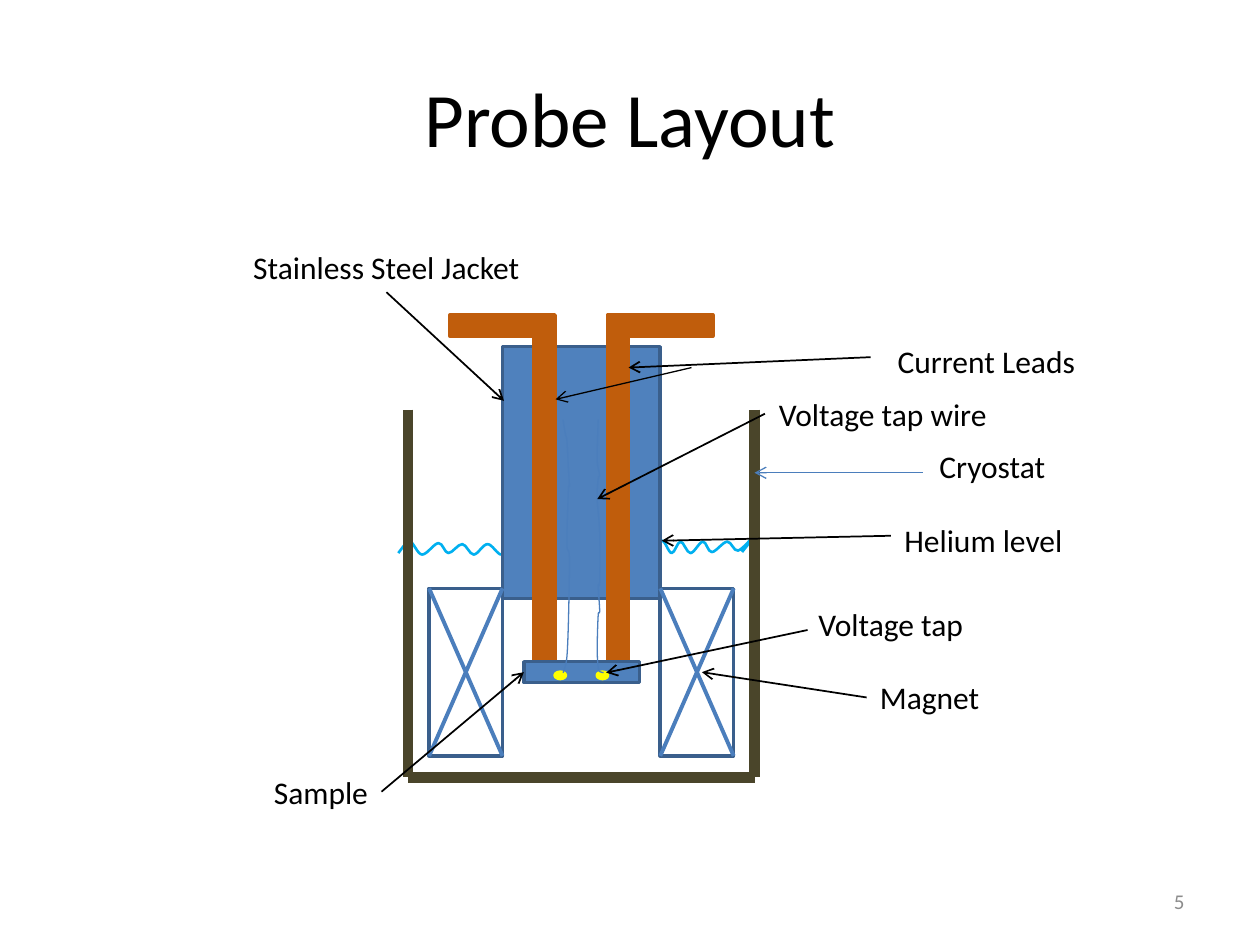
"""Build the slide "Probe Layout": a labelled section of a probe in a cryostat."""
from lxml.etree import SubElement
from pptx import Presentation
from pptx.dml.color import RGBColor as RGB
from pptx.enum.shapes import MSO_CONNECTOR as LINK, MSO_SHAPE as FORM
from pptx.enum.text import MSO_ANCHOR as ANCHOR, MSO_AUTO_SIZE as FIT, PP_ALIGN as ALIGN
from pptx.oxml.ns import qn
from pptx.util import Cm, Pt

BLACK = RGB(0x00, 0x00, 0x00)
WHITE = RGB(0xFF, 0xFF, 0xFF)
GREY = RGB(0x8C, 0x8C, 0x8C)
BLUE = RGB(0x4F, 0x81, 0xBD)
EDGE = RGB(0x3A, 0x5F, 0x8C)
WIRE = RGB(0x4B, 0x7E, 0xBC)
COPPER = RGB(0xC0, 0x5D, 0x0C)
YELLOW = RGB(0xFF, 0xFF, 0x00)
WALL = RGB(0x4A, 0x45, 0x2A)
WATER = RGB(0x00, 0xB0, 0xF0)

TITLE = "Probe Layout"
NUMBER = "5"
WAVE = [
    (8.03, 11.15), (8.26, 10.92), (8.51, 11.18), (8.84, 10.95), (9.04, 11.15),
    (9.32, 10.97), (9.55, 11.18), (9.83, 10.97), (10.11, 11.18), (10.31, 10.92),
    (10.62, 11.2), (10.92, 10.87), (11.05, 11.18), (11.33, 10.95), (11.58, 11.18),
    (11.79, 10.9), (12.19, 11.2), (12.45, 10.92), (12.65, 11.15), (12.88, 10.97),
    (13.08, 11.15), (13.34, 10.9), (13.54, 11.15), (13.72, 10.92), (13.92, 11.15),
    (14.17, 10.92), (14.35, 11.13), (14.66, 10.92), (14.88, 11.1), (15.21, 10.8),
    (14.96, 11.13),
]
PARTS = [
    ("jacket", FORM.RECTANGLE, (10.13, 6.99, 3.18, 5.08), BLUE, EDGE),
    ("left lead", FORM.RECTANGLE, (10.77, 6.77, 0.42, 6.56), COPPER, COPPER),
    ("right lead", FORM.RECTANGLE, (12.25, 6.77, 0.42, 6.56), COPPER, COPPER),
    ("left arm", FORM.RECTANGLE, (9.07, 6.35, 2.12, 0.43), COPPER, COPPER),
    ("right arm", FORM.RECTANGLE, (12.25, 6.35, 2.12, 0.43), COPPER, COPPER),
    ("sample", FORM.RECTANGLE, (10.56, 13.34, 2.33, 0.42), BLUE, EDGE),
    ("left tap", FORM.OVAL, (11.19, 13.55, 0.21, 0.13), YELLOW, YELLOW),
    ("right tap", FORM.OVAL, (12.04, 13.55, 0.21, 0.13), YELLOW, YELLOW),
]
WIRES = [
    [(11.35, 13.56), (11.38, 13.49), (11.43, 13.23), (11.46, 12.52), (11.48, 11.25),
     (11.43, 10.97), (11.46, 9.88), (11.48, 9.8), (11.46, 9.45), (11.43, 8.89),
     (11.4, 8.76), (11.35, 8.46)],
    [(12.17, 13.56), (12.09, 13.54), (12.06, 13.46), (12.04, 13.08), (12.06, 12.4),
     (12.09, 12.32), (12.06, 11.81), (12.09, 11.73), (12.09, 10.74), (12.04, 10.06),
     (12.06, 9.65), (12.09, 9.58), (12.04, 9.27), (12.06, 8.46)],
]
MAGNETS, TOP, WIDE, HIGH = (13.31, 8.65), 11.86, 1.48, 3.38
LEFT, RIGHT, RIM, FLOOR = 8.22, 15.21, 8.26, 15.67
RIGHT_WALL = [((RIGHT, RIM), (RIGHT, FLOOR)), ((8.43, FLOOR), (RIGHT, FLOOR))]
LEFT_WALL = [((8.86, FLOOR), (LEFT, FLOOR)), ((LEFT, RIM), (LEFT, FLOOR))]
LABELS = [
    ("Current Leads", (17.75, 6.77, 4.27), (17.55, 7.2), (12.67, 7.41), None),
    ("Magnet", (17.47, 13.55, 2.54), None, (14.15, 13.55), 1),
    ("Helium level", (17.96, 10.37, 3.73), (17.96, 10.8), (13.34, 10.9), None),
    ("Sample", (5.25, 15.45, 2.44), None, "sample", 3),
    ("Voltage tap wire", (15.42, 7.83, 4.75), None, (12.04, 10.06), 1),
    ("Voltage tap", (16.23, 12.07, 3.45), (16.28, 12.7), (12.22, 13.56), None),
    ("Cryostat", (18.67, 8.89, 2.67), (18.6, 9.53), (15.21, 9.53), None),
    ("Stainless Steel Jacket", (4.82, 4.87, 5.94), None, (10.16, 8.08), 2),
]


def write(frame, text, size=18, color=BLACK, align=ALIGN.CENTER):
    frame.text = text
    para = frame.paragraphs[0]
    para.alignment = align
    font = para.runs[0].font
    font.name, font.size, font.color.rgb = "Calibri", Pt(size), color


def paint(shape, fill, edge, width=2):
    shape.shadow.inherit = False
    if fill is None:
        shape.fill.background()
    else:
        shape.fill.solid()
        shape.fill.fore_color.rgb = fill
    shape.line.color.rgb = edge
    shape.line.width = Pt(width)


def part(slide, form, box, fill, edge):
    shape = slide.shapes.add_shape(form, *map(Cm, box))
    paint(shape, fill, edge)
    return shape


def bend(shape):
    nodes = list(shape._element.iter(qn("a:pt")))
    spots = [(int(n.get("x")), int(n.get("y"))) for n in nodes]
    ends = [spots[0], *spots, spots[-1]]
    for i, node in enumerate(nodes[1:]):
        before, start, stop, after = ends[i:i + 4]
        near = [s + (e - b) // 6 for b, s, e in zip(before, start, stop)]
        far = [e - (a - s) // 6 for s, e, a in zip(start, stop, after)]
        step = node.getparent()
        arc = SubElement(step.getparent(), qn("a:cubicBezTo"))
        for x, y in (near, far, stop):
            SubElement(arc, qn("a:pt"), x=str(x), y=str(y))
        step.getparent().remove(step)


def curve(slide, points, color, width):
    path = [(Cm(x), Cm(y)) for x, y in points]
    pen = slide.shapes.build_freeform(*path[0])
    pen.add_line_segments(path[1:], close=False)
    shape = pen.convert_to_shape()
    bend(shape)
    paint(shape, None, color, width)


def line(slide, start, end, color, width, arrow=False):
    link = slide.shapes.add_connector(LINK.STRAIGHT, *map(Cm, start + end))
    link.line.color.rgb = color
    link.line.width = Pt(width)
    if arrow:
        SubElement(link.line._get_or_add_ln(), qn("a:tailEnd"), type="arrow")
    SubElement(link._element.spPr, qn("a:effectLst"))
    return link


def label(slide, text, box):
    shape = slide.shapes.add_textbox(*map(Cm, box), Cm(1.02))
    write(shape.text_frame, text)
    shape.text_frame.word_wrap = False
    shape.text_frame.auto_size = FIT.SHAPE_TO_FIT_TEXT
    return shape


def main():
    deck = Presentation()
    deck.slide_width, deck.slide_height = Cm(25.4), Cm(19.05)
    slide = deck.slides.add_slide(deck.slide_layouts[5])
    title = slide.shapes.title
    title.left, title.top, title.width, title.height = map(Cm, (1.27, 0.76, 22.86, 3.18))
    title.text_frame.vertical_anchor = ANCHOR.MIDDLE
    write(title.text_frame, TITLE, size=44)

    curve(slide, WAVE, WATER, 1.5)
    parts = {name: part(slide, *look) for name, *look in PARTS}
    for wire in WIRES:
        curve(slide, wire, WIRE, 0.75)

    for start, end in RIGHT_WALL:
        line(slide, start, end, WALL, 6)
    low = TOP + HIGH
    for x in MAGNETS:
        part(slide, FORM.RECTANGLE, (x, TOP, WIDE, HIGH), WHITE, EDGE)
        line(slide, (x, TOP), (x + WIDE, low), WIRE, 2.25)
        line(slide, (x, low), (x + WIDE, TOP), WIRE, 2.25)
    for start, end in LEFT_WALL:
        line(slide, start, end, WALL, 6)

    for text, box, start, end, side in LABELS:
        note = label(slide, text, box)
        look = (WIRE, 0.75) if text == "Cryostat" else (BLACK, 1)
        goal = end if isinstance(end, tuple) else (0, 0)
        link = line(slide, start or (0, 0), goal, *look, arrow=True)
        if side is not None:
            link.begin_connect(note, side)
        if end in parts:
            link.end_connect(parts[end], 1)
    line(slide, (13.94, 7.41), (11.2, 8.05), BLACK, 0.75, arrow=True)

    page = slide.shapes.add_textbox(*map(Cm, (18.2, 17.65, 5.93, 1.02)))
    page.text_frame.word_wrap = True
    page.text_frame.vertical_anchor = ANCHOR.MIDDLE
    write(page.text_frame, NUMBER, size=12, color=GREY, align=ALIGN.RIGHT)
    deck.save("out.pptx")


if __name__ == "__main__":
    main()
